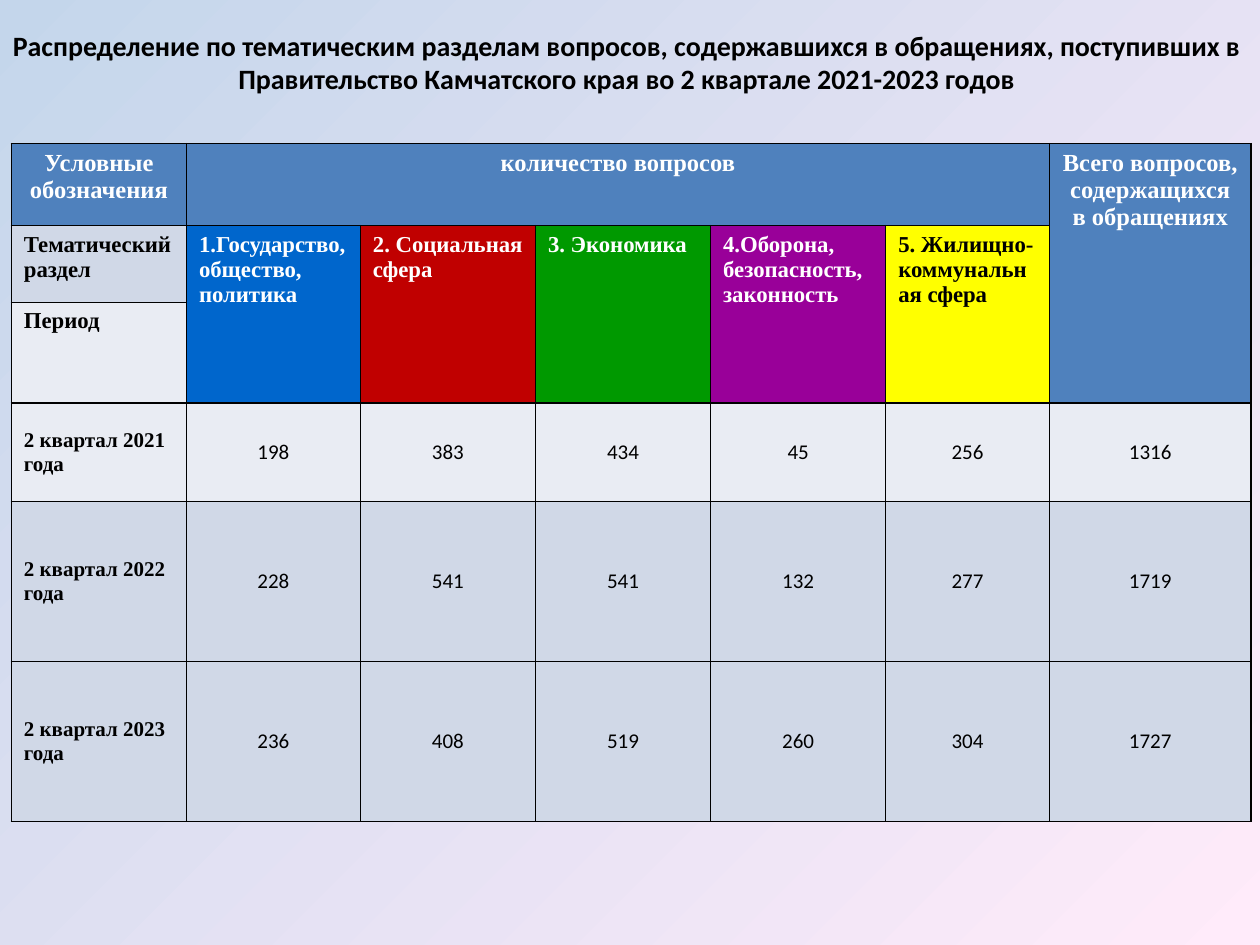
from lxml.etree import SubElement
from pptx import Presentation
from pptx.dml.color import RGBColor
from pptx.enum.text import MSO_ANCHOR, MSO_AUTO_SIZE, PP_ALIGN
from pptx.oxml.ns import qn
from pptx.util import Inches, Pt

COLORS = {
    "sky": "C4D6EB", "pink": "FFEBFA", "black": "000000", "white": "FFFFFF",
    "header": "4F81BD", "band": "D0D8E7", "light": "E9ECF3",
    "state": "0066CC", "social": "C00000", "economy": "009900",
    "defence": "990099", "housing": "FFFF00",
}


def write(frame, text, size, font="Times New Roman", color="black", bold=True,
          align=PP_ALIGN.LEFT):
    paragraph = frame.paragraphs[0]
    paragraph.alignment = align
    run = paragraph.add_run()
    run.text = text
    run.font.size = Pt(size)
    run.font.name = font
    run.font.bold = bold
    run.font.color.rgb = RGBColor.from_string(COLORS[color])


def style_cell(cell, fill):
    """Give a cell thin black borders and a solid fill."""
    properties = cell._tc.get_or_add_tcPr()
    for side in ("lnL", "lnR", "lnT", "lnB"):
        border = SubElement(properties, qn(f"a:{side}"), w=str(Pt(0.96)))
        solid = SubElement(border, qn("a:solidFill"))
        SubElement(solid, qn("a:srgbClr"), val=COLORS["black"])
    cell.fill.solid()
    cell.fill.fore_color.rgb = RGBColor.from_string(COLORS[fill])


prs = Presentation()
prs.slide_width, prs.slide_height = Inches(10), Inches(7.5)
slide = prs.slides.add_slide(prs.slide_layouts[5])

background = slide.background.fill
background.gradient()
background.gradient_angle = 315
for stop, name, position in zip(background.gradient_stops, ("sky", "pink"), (0, 1)):
    stop.color.rgb = RGBColor.from_string(COLORS[name])
    stop.position = position

title = slide.shapes.title
title.left, title.top = Inches(-0.07), Inches(-0.3)
title.width, title.height = Inches(10.09), Inches(1.58)
title.text_frame.word_wrap = True
title.text_frame.auto_size = MSO_AUTO_SIZE.NONE
title.text_frame.vertical_anchor = MSO_ANCHOR.MIDDLE
write(title.text_frame,
      "Распределение по тематическим разделам вопросов, содержавшихся в обращениях, "
      "поступивших в Правительство Камчатского края во 2 квартале 2021-2023 годов",
      16, font="Calibri", align=PP_ALIGN.CENTER)

column_widths = [1.39, 1.38, 1.39, 1.39, 1.39, 1.3, 1.6]
row_heights = [0.65, 0.61, 0.8, 0.78, 1.27, 1.27]
table = slide.shapes.add_table(
    len(row_heights), len(column_widths), Inches(0.09), Inches(1.14),
    Inches(sum(column_widths)), Inches(sum(row_heights))).table
for column, width in zip(table.columns, column_widths):
    column.width = Inches(width)
for row, height in zip(table.rows, row_heights):
    row.height = Inches(height)

topics = [
    ("1.Государство, общество, политика", "state", "white"),
    ("2. Социальная сфера", "social", "white"),
    ("3. Экономика", "economy", "white"),
    ("4.Оборона, безопасность, законность", "defence", "white"),
    ("5. Жилищно-коммунальная сфера", "housing", "black"),
]
periods = [
    ("2 квартал 2021 года", [198, 383, 434, 45, 256, 1316]),
    ("2 квартал 2022 года", [228, 541, 541, 132, 277, 1719]),
    ("2 квартал 2023 года", [236, 408, 519, 260, 304, 1727]),
]

topic_fills = [fill for _, fill, _ in topics]
row_fills = [
    ["header"] * 7,
    ["band", *topic_fills, "header"],
    ["light", *topic_fills, "header"],
    ["light"] * 7,
    ["band"] * 7,
    ["band"] * 7,
]
for r, fills in enumerate(row_fills):
    for c, fill in enumerate(fills):
        style_cell(table.cell(r, c), fill)

table.cell(0, 1).merge(table.cell(0, 5))
table.cell(0, 6).merge(table.cell(2, 6))
headings = [(0, "Условные обозначения"), (1, "количество вопросов"),
            (6, "Всего вопросов, содержащихся в обращениях")]
for c, heading in headings:
    write(table.cell(0, c).text_frame, heading, 14, color="white",
          align=PP_ALIGN.CENTER)

write(table.cell(1, 0).text_frame, "Тематический раздел", 13)
write(table.cell(2, 0).text_frame, "Период", 13)
for c, (topic, _, text_color) in enumerate(topics, start=1):
    table.cell(1, c).merge(table.cell(2, c))
    write(table.cell(1, c).text_frame, topic, 13, color=text_color)

for r, (period, counts) in enumerate(periods, start=3):
    for cell in table.rows[r].cells:
        cell.vertical_anchor = MSO_ANCHOR.MIDDLE
    write(table.cell(r, 0).text_frame, period, 12)
    for c, count in enumerate(counts, start=1):
        write(table.cell(r, c).text_frame, str(count), 12, font="Calibri",
              bold=False, align=PP_ALIGN.CENTER)

prs.save("out.pptx")
